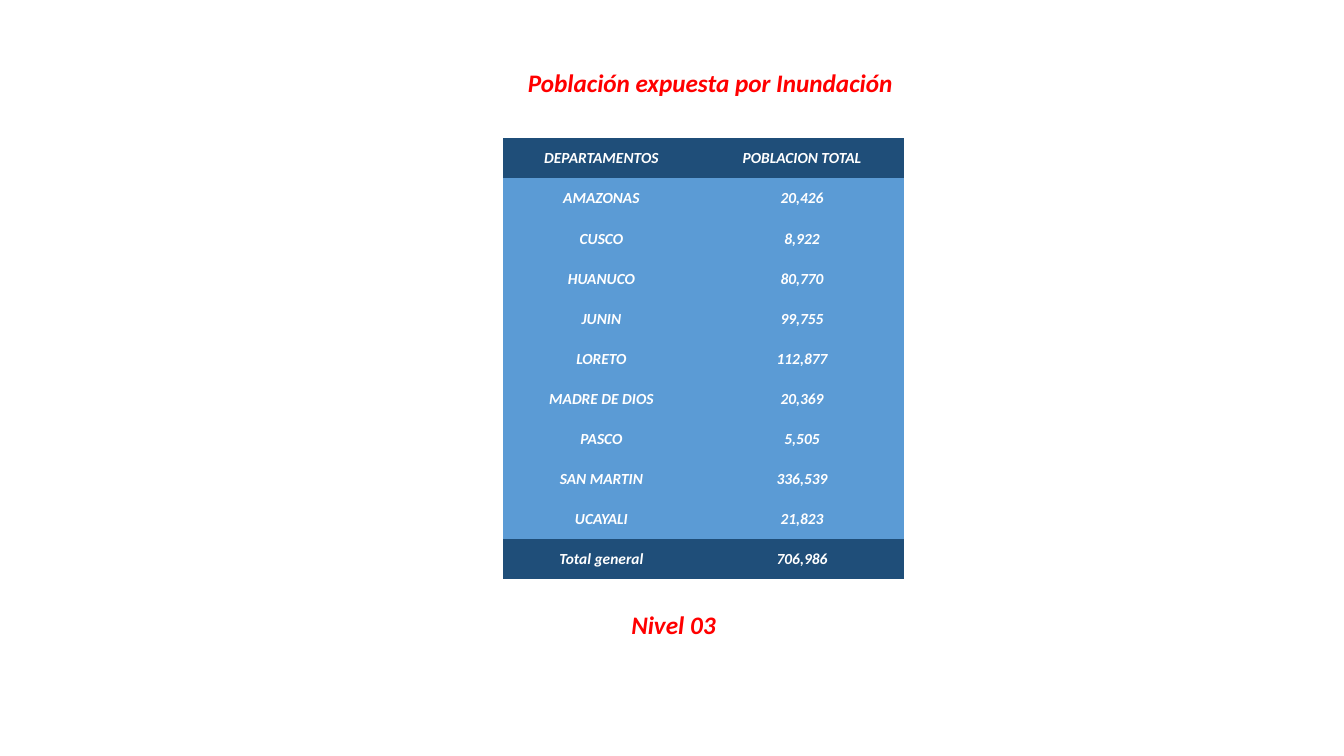
import pptx
import pptx.dml.color
import pptx.enum.text
import pptx.oxml.ns
import pptx.util

Inches = pptx.util.Inches

COLORS = {"heading": "FF0000", "text": "FFFFFF", "band": "1F4E79", "row": "5B9BD5"}
NO_GRID_STYLE = "{2D5ABB26-0587-4C30-8999-92F81FD0307C}"
TITLE_ONLY_LAYOUT = 5

POPULATION = [
    ("DEPARTAMENTOS", "POBLACION TOTAL"),
    ("AMAZONAS", "20,426"),
    ("CUSCO", "8,922"),
    ("HUANUCO", "80,770"),
    ("JUNIN", "99,755"),
    ("LORETO", "112,877"),
    ("MADRE DE DIOS", "20,369"),
    ("PASCO", "5,505"),
    ("SAN MARTIN", "336,539"),
    ("UCAYALI", "21,823"),
    ("Total general", "706,986"),
]


def rgb(name):
    return pptx.dml.color.RGBColor.from_string(COLORS[name])


def write_text(text_frame, text, size=18, color="heading", font="Calibri", bold=True, italic=True):
    paragraph = text_frame.paragraphs[0]
    paragraph.alignment = pptx.enum.text.PP_ALIGN.CENTER
    paragraph.line_spacing = 1.0
    run = paragraph.add_run()
    run.text = text
    run.font.name = font
    run.font.size = pptx.util.Pt(size)
    run.font.bold = bold
    run.font.italic = italic
    run.font.color.rgb = rgb(color)


class SlideBuilder:
    def __init__(self, presentation):
        self.slide = presentation.slides.add_slide(presentation.slide_layouts[TITLE_ONLY_LAYOUT])

    def fit_heading(self, shape, text, wrap):
        text_frame = shape.text_frame
        text_frame.word_wrap = wrap
        text_frame.auto_size = pptx.enum.text.MSO_AUTO_SIZE.SHAPE_TO_FIT_TEXT
        text_frame.vertical_anchor = pptx.enum.text.MSO_ANCHOR.TOP
        write_text(text_frame, text)

    def title(self, text, left, top, width, height):
        shape = self.slide.shapes.title
        shape.left, shape.top = Inches(left), Inches(top)
        shape.width, shape.height = Inches(width), Inches(height)
        self.fit_heading(shape, text, wrap=False)

    def label(self, text, left, top, width, height):
        shape = self.slide.shapes.add_textbox(
            Inches(left), Inches(top), Inches(width), Inches(height)
        )
        self.fit_heading(shape, text, wrap=True)

    def table(self, rows, left, top, column_widths, height):
        frame = self.slide.shapes.add_table(
            len(rows), len(column_widths), Inches(left), Inches(top),
            Inches(sum(column_widths)), Inches(height),
        )
        style = next(frame.element.iter(pptx.oxml.ns.qn("a:tableStyleId")))
        style.text = NO_GRID_STYLE
        table = frame.table
        table.horz_banding = False
        for column, width in zip(table.columns, column_widths):
            column.width = Inches(width)
        for row_index, values in enumerate(rows):
            table.rows[row_index].height = Inches(height / len(rows))
            fill = "band" if row_index in (0, len(rows) - 1) else "row"
            for cell, value in zip(table.rows[row_index].cells, values):
                self.cell(cell, value, fill)

    def cell(self, cell, text, fill):
        cell.fill.solid()
        cell.fill.fore_color.rgb = rgb(fill)
        cell.vertical_anchor = pptx.enum.text.MSO_ANCHOR.MIDDLE
        cell.margin_left = cell.margin_right = cell.margin_top = Inches(0.01)
        cell.margin_bottom = 0
        write_text(cell.text_frame, text, size=11, color="text")


def main():
    presentation = pptx.Presentation()
    presentation.slide_width = Inches(13.33)
    presentation.slide_height = Inches(7.5)
    builder = SlideBuilder(presentation)
    builder.title("Población expuesta por Inundación", 5.12, 0.62, 3.85, 0.4)
    builder.label("Nivel 03", 6.13, 6, 1.1, 0.4)
    builder.table(POPULATION, 4.99, 1.37, (1.95, 2.03), 4.37)
    presentation.save("out.pptx")


if __name__ == "__main__":
    main()
